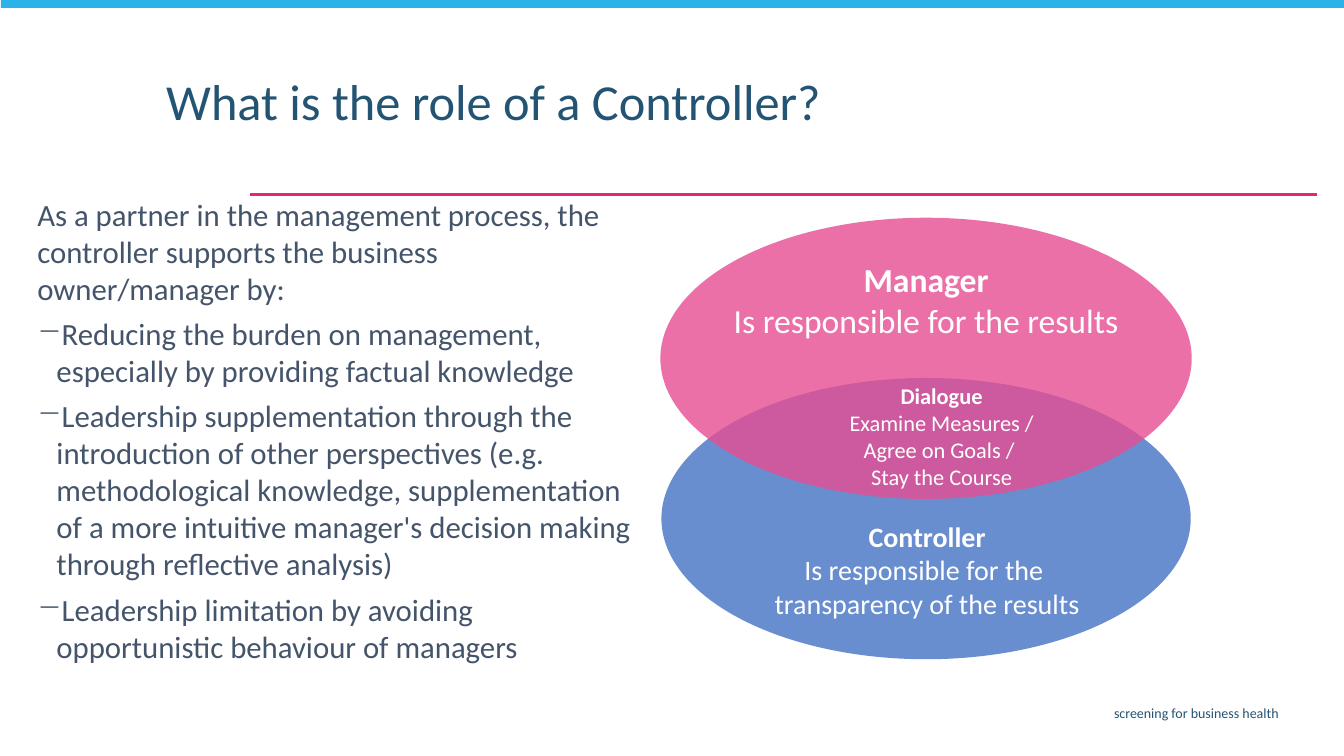
from dataclasses import dataclass

from lxml import etree
from pptx import Presentation
from pptx import util as u
from pptx.dml.color import RGBColor
from pptx.enum import shapes, text
from pptx.oxml.ns import qn


@dataclass(frozen=True)
class Theme:
    face: str = "Calibri"
    navy: str = "245473"
    slate: str = "44546A"
    white: str = "FFFFFF"
    cyan: str = "29B3E8"
    pink: str = "EC2179"
    rose: str = "E64D92"
    blue: str = "4472C4"
    title: int = 36
    lead: int = 24
    body: int = 22
    role: int = 20
    talk: int = 16
    foot: int = 10


class Page:
    def __init__(self, slide, theme):
        self.slide = slide
        self.theme = theme

    def shape(self, kind, box, color, alpha=None):
        """Add a borderless shape; alpha is its opacity in percent."""
        item = self.slide.shapes.add_shape(kind, *map(u.Inches, box))
        item.shadow.inherit = False
        item.line.fill.background()
        item.fill.solid()
        item.fill.fore_color.rgb = RGBColor.from_string(color)
        if alpha:
            tone = item._element.spPr.find(qn("a:solidFill"))[0]
            etree.SubElement(tone, qn("a:alpha"), val=str(alpha * 1000))

    def rule(self, start, end, color, width):
        line = self.slide.shapes.add_connector(
            shapes.MSO_CONNECTOR.STRAIGHT, *map(u.Inches, start + end))
        line.line.color.rgb = RGBColor.from_string(color)
        line.line.width = u.Pt(width)
        etree.SubElement(line._element.spPr, qn("a:effectLst"))

    def frame(self, box, anchor=text.MSO_ANCHOR.TOP):
        frame = self.slide.shapes.add_textbox(*map(u.Inches, box)).text_frame
        frame.word_wrap = True
        frame.vertical_anchor = anchor
        return frame

    def para(self, frame, words, size, color, align=None, bold=False, mark=None):
        """Fill the empty first paragraph, or append one; mark is a bullet."""
        first = frame.paragraphs[0]
        para = frame.add_paragraph() if first.runs else first
        para.text = words
        if mark:
            props = para._p.get_or_add_pPr()
            hang = u.Inches(0.19)
            props.set("marL", str(hang))
            props.set("indent", str(-hang))
            etree.SubElement(props, qn("a:buChar"), char=mark)
        para.alignment = align
        para.font.name = self.theme.face
        para.font.size = u.Pt(size)
        para.font.bold = bold
        para.font.color.rgb = RGBColor.from_string(color)
        return para

    def label(self, box, head, words, size):
        frame = self.frame(box, text.MSO_ANCHOR.BOTTOM)
        for line, bold in ((head, True), (words, False)):
            self.para(frame, line, size, self.theme.white,
                      text.PP_ALIGN.CENTER, bold)

    def list(self, box, intro, points):
        frame = self.frame(box)
        frame.margin_left = frame.margin_right = u.Inches(0.09)
        frame.margin_top = frame.margin_bottom = u.Inches(0.04)
        style = self.theme.body, self.theme.slate
        self.para(frame, intro, *style)
        for point in points:
            self.para(frame, point, *style, mark="−").space_before = u.Pt(6)


def main():
    deck = Presentation()
    deck.slide_width, deck.slide_height = u.Inches(13.33), u.Inches(7.5)
    theme = Theme()
    page = Page(deck.slides.add_slide(deck.slide_layouts[6]), theme)

    page.rule((13.06, 1.93), (2.48, 1.93), theme.pink, 1.5)
    page.shape(shapes.MSO_SHAPE.RECTANGLE, (0.01, -0.02, 13.34, 0.1), theme.cyan)
    page.para(page.frame((3.65, 6.94, 9.13, 0.29)), "screening for business health",
              theme.foot, theme.navy, text.PP_ALIGN.RIGHT)
    title = page.para(page.frame((1.55, 0.71, 9.68, 0.76)),
                      "What is the role of a Controller?", theme.title, theme.navy)
    title.line_spacing = 0.9

    page.list(
        (0.28, 1.9, 6.15, 5.21),
        "As a partner in the management process, the controller supports "
        "the business owner/manager by:",
        ("Reducing the burden on management, especially by providing "
         "factual knowledge",
         "Leadership supplementation through the introduction of other "
         "perspectives (e.g. methodological knowledge, supplementation of a "
         "more intuitive manager's decision making through reflective analysis)",
         "Leadership limitation by avoiding opportunistic behaviour of managers"))

    for box, color in (((6.56, 3.75, 5.25, 2.79), theme.blue),
                       ((6.55, 2.16, 5.27, 2.79), theme.rose)):
        page.shape(shapes.MSO_SHAPE.OVAL, box, color, alpha=80)

    page.label((6.88, 2.51, 4.61, 0.91), "Manager",
               "Is responsible for the results", theme.lead)
    page.label((6.88, 5.09, 4.63, 1.11), "Controller",
               "Is responsible for the \vtransparency of the results", theme.role)
    page.label((6.76, 3.73, 5.16, 1.18), "Dialogue",
               "Examine Measures /\vAgree on Goals / \vStay the Course", theme.talk)
    deck.save("out.pptx")


if __name__ == "__main__":
    main()
